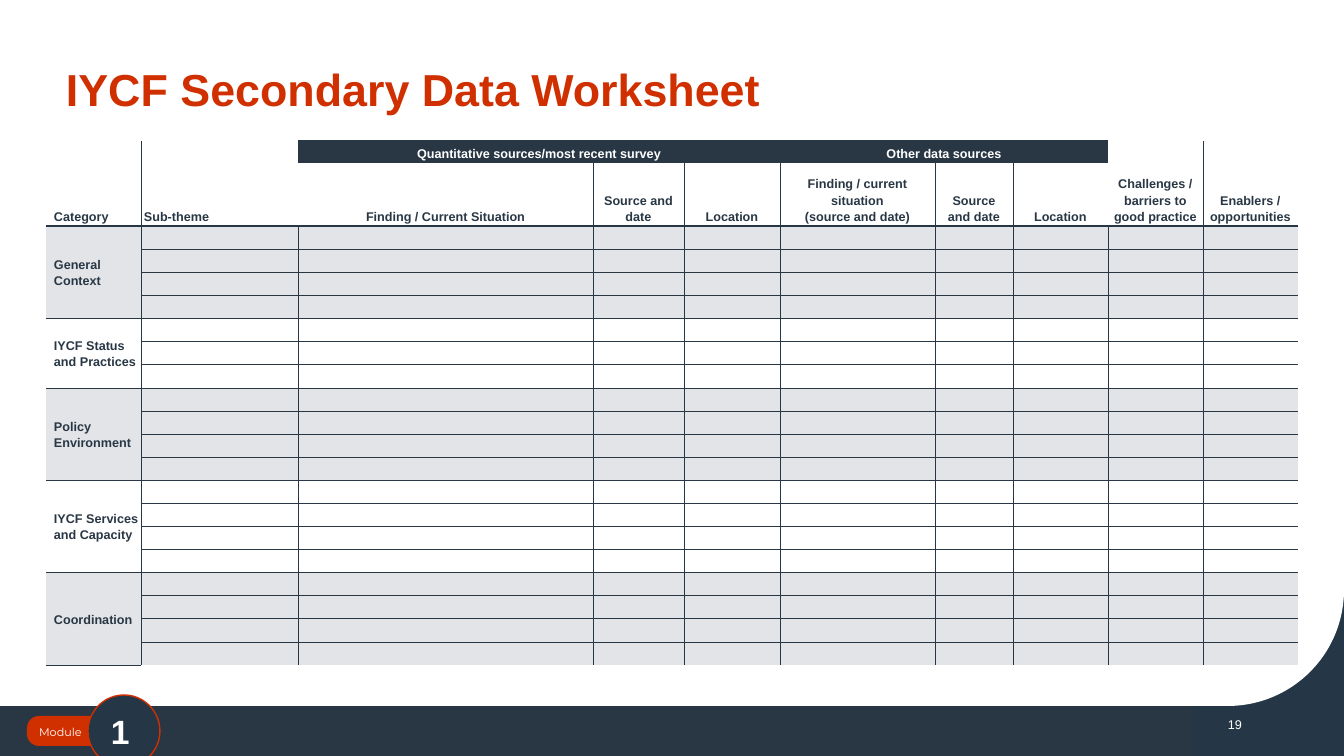
from lxml.etree import SubElement
from pptx import Presentation
from pptx.dml.color import RGBColor as RGB
from pptx.enum.shapes import MSO_SHAPE as Shape
from pptx.enum.text import MSO_ANCHOR as Anchor, PP_ALIGN as Align
from pptx.oxml.ns import qn
from pptx.util import Pt

U = 9144000 / 1008
HEX = {"navy": "253746", "slate": "293745", "red": "D03000",
       "gray": "E2E4E7", "white": "FFFFFF"}

# Header cells: row, column, rows down, columns across, text
HEADS = [
    (0, 0, 2, 1, "Category"),
    (0, 1, 2, 1, "Sub-theme"),
    (0, 2, 1, 3, "Quantitative sources/most recent survey"),
    (0, 5, 1, 3, "Other data sources"),
    (0, 8, 2, 1, "Challenges /\nbarriers to good practice"),
    (0, 9, 2, 1, "Enablers / opportunities"),
    (1, 2, 1, 1, "Finding / Current Situation"),
    (1, 3, 1, 1, "Source and date"),
    (1, 4, 1, 1, "Location"),
    (1, 5, 1, 1, "Finding / current\vsituation\v(source and date)"),
    (1, 6, 1, 1, "Source\vand date"),
    (1, 7, 1, 1, "Location"),
]
GROUPS = [
    ("General Context", 4),
    ("IYCF Status and Practices", 3),
    ("Policy Environment", 4),
    ("IYCF Services and Capacity", 4),
    ("Coordination", 4),
]
COLS = [95, 157, 295, 91, 96, 155, 78, 95, 95, 95]
HEAD_ROWS = [22, 63]
BODY = 439
COUNT = sum(n for _, n in GROUPS)
ROWS = HEAD_ROWS + [BODY / COUNT] * COUNT


def emu(*px):
    return [round(p * U) for p in px]


def rgb(name):
    return RGB.from_string(HEX[name])


def style(para, size, color, bold=False, face="Arial"):
    for run in para.runs:
        font = run.font
        font.name, font.size, font.bold = face, Pt(size), bold
        font.color.rgb = rgb(color)


def block(kind, box, fill, line=None):
    shape = slide.shapes.add_shape(kind, *emu(*box))
    shape.shadow.inherit = False
    shape.fill.solid()
    shape.fill.fore_color.rgb = rgb(fill)
    if line:
        shape.line.color.rgb = rgb(line)
        shape.line.width = Pt(1)
    else:
        shape.line.fill.background()
    return shape


def label(text, box, inset, size, color, bold=False, face="Arial",
          align=Align.LEFT, wrap=True):
    frame = slide.shapes.add_textbox(*emu(*box)).text_frame
    frame.word_wrap = wrap
    side, end = emu(*inset)
    frame.margin_left = frame.margin_right = side
    frame.margin_top = frame.margin_bottom = end
    frame.text = text
    para = frame.paragraphs[0]
    para.alignment = align
    style(para, size, color, bold, face)


def side_line(row, edge):
    """Colour and width of the vertical line at a column edge, or None."""
    if edge in (0, len(COLS)):
        return None
    if row > 1 or edge in (1, 9):
        return "slate", 0.25
    if edge in (2, 8):
        return None
    if row == 0:
        return ("white", 0.25) if edge == 5 else None
    return "slate", 0.25


def level_line(edge, col):
    """Colour and width of the horizontal line at a row edge, or None."""
    if edge == 0:
        return ("slate", 1) if 2 <= col <= 7 else None
    if edge in (1, len(ROWS)):
        return None
    return ("navy", 1) if edge == 2 else ("slate", 0.25)


def border(cell, row, col):
    props = cell._tc.get_or_add_tcPr()
    lines = {"L": side_line(row, col), "R": side_line(row, col + 1),
             "T": level_line(row, col), "B": level_line(row + 1, col)}
    for side, line in lines.items():
        node = SubElement(props, qn("a:ln" + side))
        if line:
            color, width = line
            node.set("w", str(Pt(width)))
            fill = SubElement(node, qn("a:solidFill"))
            SubElement(fill, qn("a:srgbClr")).set("val", HEX[color])
        else:
            SubElement(node, qn("a:noFill"))


def paint(cell, color):
    cell.fill.solid()
    cell.fill.fore_color.rgb = rgb(color)


def write(cell, text, color, align, anchor):
    cell.text = text
    cell.vertical_anchor = anchor
    for para in cell.text_frame.paragraphs:
        para.alignment = align
        para.line_spacing = 1.15
        style(para, 9, color, True)


deck = Presentation()
deck.slide_width, deck.slide_height = emu(1344, 756)
slide = deck.slides.add_slide(deck.slide_layouts[6])

# Footer
block(Shape.RECTANGLE, (1193, 575, 151, 181), "navy")
block(Shape.RECTANGLE, (0, 706, 1193, 50), "slate")
block(Shape.ROUND_2_DIAG_RECTANGLE, (0, 9, 1344, 697), "white")
pill = block(Shape.ROUNDED_RECTANGLE, (27, 716, 121, 30), "red")
pill.adjustments[0] = 0.4
label("19", (1216, 712, 36, 25), (10, 5), 9, "white",
      align=Align.RIGHT, wrap=False)
block(Shape.OVAL, (88, 695, 72, 72), "navy", "red")
label("Module", (39, 724, 103, 15), (0, 1), 8, "white", face="Montserrat")
label("1", (101, 706, 46, 50), (10, 5), 24, "white", True)

# Worksheet
table = slide.shapes.add_table(
    len(ROWS), len(COLS), *emu(46, 141, sum(COLS), sum(ROWS))).table
table.first_row = table.horz_banding = False
for column, width in zip(table.columns, emu(*COLS)):
    column.width = width
for line, height in zip(table.rows, emu(*ROWS)):
    line.height = height

shades = ["white"] * len(HEAD_ROWS)
for i, (_, n) in enumerate(GROUPS):
    shades += ["white" if i % 2 else "gray"] * n

for r, shade in enumerate(shades):
    for c in range(len(COLS)):
        cell = table.cell(r, c)
        cell.margin_left, cell.margin_right = emu(3 if c else 8, 3)
        cell.margin_top = cell.margin_bottom = emu(2)[0]
        border(cell, r, c)
        paint(cell, "slate" if r == 0 and 2 <= c <= 7 else shade)
        end = SubElement(cell.text_frame.paragraphs[0]._p, qn("a:endParaRPr"))
        end.set("sz", "900")

for r, c, down, across, text in HEADS:
    cell = table.cell(r, c)
    if down * across > 1:
        cell.merge(table.cell(r + down - 1, c + across - 1))
    write(cell, text, "white" if across > 1 else "slate",
          Align.CENTER if c > 1 else Align.LEFT, Anchor.BOTTOM)

top = len(HEAD_ROWS)
for name, n in GROUPS:
    cell = table.cell(top, 0)
    cell.merge(table.cell(top + n - 1, 0))
    write(cell, name, "slate", Align.LEFT, Anchor.MIDDLE)
    top += n

label("IYCF Secondary Data Worksheet", (53, 49, 1143, 80), (13, 13),
      32, "red", True)

deck.save("out.pptx")
